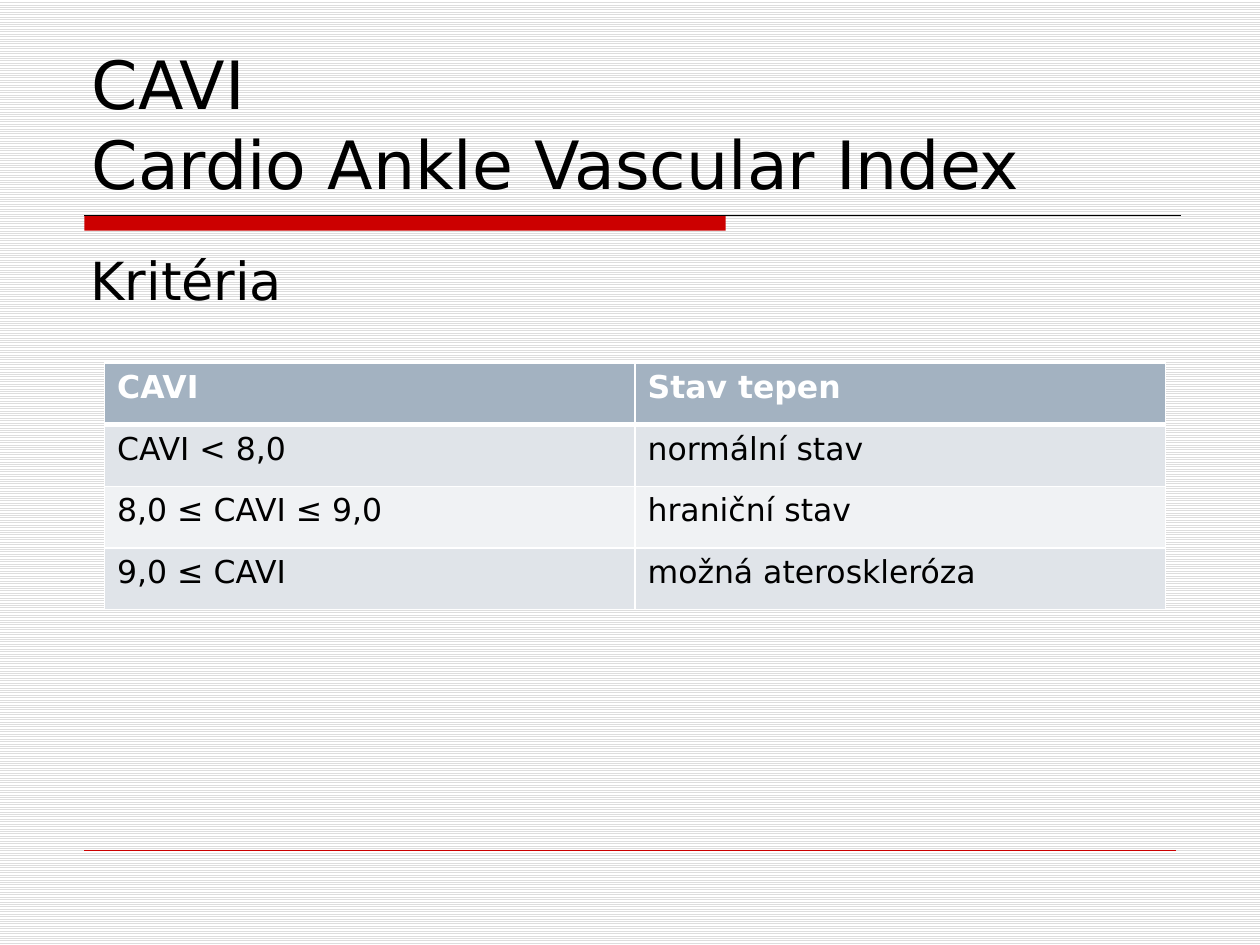
from lxml.etree import SubElement
from pptx import Presentation
from pptx.dml.color import RGBColor
from pptx.enum.dml import MSO_PATTERN
from pptx.enum.shapes import MSO_CONNECTOR, MSO_SHAPE
from pptx.enum.text import MSO_ANCHOR
from pptx.oxml.ns import qn
from pptx.util import Inches, Pt

COLORS = {
    "black": "000000", "white": "FFFFFF", "stripe": "DDDDDD", "red": "CC0000",
    "header": "A3B2C1", "odd": "E0E4E9", "even": "F0F2F4",
}
FONT = "DejaVu Sans"
CRITERIA = [
    ("CAVI", "Stav tepen"),
    ("CAVI < 8,0", "normální stav"),
    ("8,0 ≤ CAVI ≤ 9,0", "hraniční stav"),
    ("9,0 ≤ CAVI", "možná ateroskleróza"),
]


def color(name):
    return RGBColor.from_string(COLORS[name])


def write_text(frame, text, size=18, ink="black", bold=False):
    paragraph = frame.paragraphs[0]
    paragraph.text = text
    for run in paragraph.runs:
        run.font.name = FONT
        run.font.size = Pt(size)
        run.font.bold = bold
        run.font.color.rgb = color(ink)


class SlideBuilder:
    def __init__(self, slide):
        self.slide = slide

    def background(self):
        fill = self.slide.background.fill
        fill.patterned()
        fill.pattern = MSO_PATTERN.LIGHT_HORIZONTAL
        fill.fore_color.rgb = color("stripe")
        fill.back_color.rgb = color("white")

    def bar(self, left, top, width, height, ink):
        shape = self.slide.shapes.add_shape(
            MSO_SHAPE.RECTANGLE, Inches(left), Inches(top), Inches(width), Inches(height))
        shape.shadow.inherit = False
        shape.fill.solid()
        shape.fill.fore_color.rgb = color(ink)
        shape.line.fill.background()

    def rule(self, left, right, top, ink, width):
        connector = self.slide.shapes.add_connector(
            MSO_CONNECTOR.STRAIGHT, Inches(left), Inches(top), Inches(right), Inches(top))
        connector.line.color.rgb = color(ink)
        connector.line.width = Pt(width)
        SubElement(connector.element.spPr, qn("a:effectLst"))

    def text(self, left, top, width, height, text, anchor=MSO_ANCHOR.TOP, **style):
        box = self.slide.shapes.add_textbox(
            Inches(left), Inches(top), Inches(width), Inches(height))
        box.text_frame.word_wrap = True
        box.text_frame.vertical_anchor = anchor
        write_text(box.text_frame, text, **style)

    def cell_borders(self, cell, **widths):
        properties = cell._tc.get_or_add_tcPr()
        for side in "LRTB":
            width = Pt(widths.get(side, 1))
            line = SubElement(properties, qn(f"a:ln{side}"), w=str(width))
            fill = SubElement(line, qn("a:solidFill"))
            SubElement(fill, qn("a:srgbClr"), val=COLORS["white"])

    def table(self, left, top, column_width, row_height, rows):
        row_count, column_count = len(rows), len(rows[0])
        table = self.slide.shapes.add_table(
            row_count, column_count, Inches(left), Inches(top),
            Inches(column_width * column_count), Inches(row_height * row_count)).table
        for row_index, row in enumerate(rows):
            is_header = row_index == 0
            band = "header" if is_header else "odd" if row_index % 2 else "even"
            widths = {0: {"B": 3}, 1: {"T": 3}}.get(row_index, {})
            for column_index, text in enumerate(row):
                cell = table.cell(row_index, column_index)
                self.cell_borders(cell, **widths)
                cell.fill.solid()
                cell.fill.fore_color.rgb = color(band)
                write_text(cell.text_frame, text, bold=is_header,
                           ink="white" if is_header else "black")


def main():
    presentation = Presentation()
    presentation.slide_width = Inches(10)
    presentation.slide_height = Inches(7.5)
    builder = SlideBuilder(presentation.slides.add_slide(presentation.slide_layouts[6]))
    builder.background()
    builder.bar(0.67, 1.71, 5.09, 0.12, "red")
    builder.rule(0.67, 9.37, 1.71, "black", 0.75)
    builder.rule(0.67, 9.33, 6.75, "red", 0.25)
    builder.text(0.63, 0.33, 8.75, 1.33, "CAVI\vCardio Ankle Vascular Index",
                 anchor=MSO_ANCHOR.BOTTOM, size=38)
    builder.text(0.62, 1.92, 8.75, 4.67, "Kritéria", size=30)
    builder.table(0.83, 2.88, 4.21, 0.49, CRITERIA)
    presentation.save("out.pptx")


if __name__ == "__main__":
    main()
